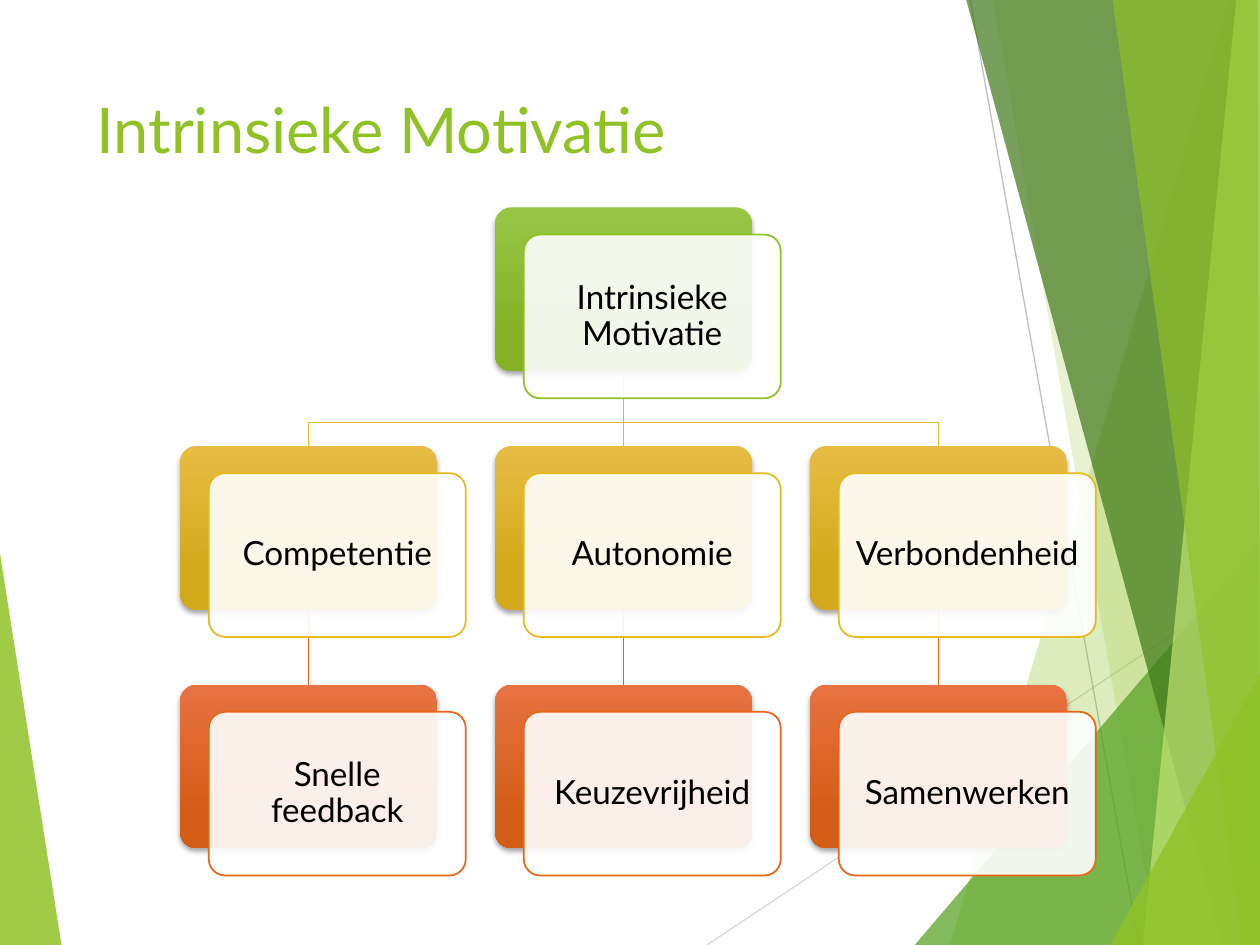
import pptx
import pptx.util
import pptx.dml.color
import pptx.enum.shapes
import pptx.enum.text
import pptx.oxml.ns
from lxml import etree

Cm, Pt = pptx.util.Cm, pptx.util.Pt
SHAPE = pptx.enum.shapes.MSO_SHAPE.ROUNDED_RECTANGLE
STRAIGHT = pptx.enum.shapes.MSO_CONNECTOR.STRAIGHT
FONT = "Lato"
GREEN, GOLD, ORANGE = "90C226", "E6B91E", "E76618"
GRADIENTS = {
    GREEN: ("97C547", "84B223"),
    GOLD: ("E7BC43", "D2A91B"),
    ORANGE: ("E87242", "D35D16"),
}
CARD_W, CARD_H = 5.18, 3.3
COL_PITCH, ROW_PITCH = 6.35, 4.81
FRONT_DX, FRONT_DY = 0.58, 0.55
BUS_DROP = 1.04

LEFT_FACET = [(0, 11.15), (1.24, 19.05), (0, 19.05)]
RULES = [((14.25, 19.05), (25.4, 11.62), "D9D9D9"),
         ((19.56, 0), (22.96, 19.05), "BFBFBF")]
RIGHT_FACETS = [
    ([(24.77, 0), (19.15, 19.05), (25.4, 19.05), (25.4, 0)], GREEN, 30),
    ([(20.02, 0), (23.34, 19.05), (25.4, 19.05), (25.4, 0)], GREEN, 20),
    ([(18.44, 19.05), (25.4, 10.9), (25.4, 19.05)], "54A021", 72),
    ([(19.48, 0), (24.64, 19.05), (25.4, 19.05), (25.4, 0)], "3F7819", 70),
    ([(24.92, 0), (23.04, 19.05), (25.4, 19.05), (25.4, 0)], "C0E474", 70),
    ([(22.43, 0), (25.04, 19.05), (25.4, 19.05), (25.35, 0)], GREEN, 65),
    ([(22.38, 19.05), (25.4, 13.59), (25.4, 19.05)], GREEN, 80),
]


def rgb(value):
    return pptx.dml.color.RGBColor.from_string(value)


def add_xml(parent, tag, **attrs):
    return etree.SubElement(parent, pptx.oxml.ns.qn(tag), attrs)


def fill_solid(sp, color, opacity):
    sp.fill.solid()
    sp.fill.fore_color.rgb = rgb(color)
    clr = sp.fill._xPr.find(".//" + pptx.oxml.ns.qn("a:srgbClr"))
    add_xml(clr, "a:alpha", val=str(opacity * 1000))


def set_line(sp, color, width):
    sp.line.color.rgb = rgb(color)
    sp.line.width = Pt(width)


def add_path(s, points, close):
    start, *rest = [(Cm(x), Cm(y)) for x, y in points]
    builder = s.shapes.build_freeform(*start)
    builder.add_line_segments(rest, close=close)
    sp = builder.convert_to_shape()
    sp.shadow.inherit = False
    return sp


def add_line(s, start, end, color, width):
    cxn = s.shapes.add_connector(STRAIGHT, *[Cm(v) for v in (*start, *end)])
    set_line(cxn, color, width)
    add_xml(cxn._element.spPr, "a:effectLst")
    return cxn


def add_facet(s, left, top, points, color, opacity):
    sp = add_path(s, [(left + x, top + y) for x, y in points], True)
    fill_solid(sp, color, opacity)
    sp.line.fill.background()


def add_background(s, left, top):
    add_facet(s, left, top, LEFT_FACET, GREEN, 85)
    for (x1, y1), (x2, y2), color in RULES:
        add_line(s, (left + x1, top + y1), (left + x2, top + y2), color, 0.75)
    for points, color, opacity in RIGHT_FACETS:
        add_facet(s, left, top, points, color, opacity)


def add_card(s, left, top):
    sp = s.shapes.add_shape(SHAPE, Cm(left), Cm(top), Cm(CARD_W), Cm(CARD_H))
    sp.adjustments[0] = 0.1
    sp.shadow.inherit = False
    return sp


def add_back_card(s, left, top, color):
    sp = add_card(s, left, top)
    sp.fill.gradient()
    sp.fill.gradient_angle = 270
    stops = zip(sp.fill.gradient_stops, (0, 0.78), GRADIENTS[color])
    for stop, position, stop_color in stops:
        stop.position = position
        stop.color.rgb = rgb(stop_color)
    sp.line.fill.background()
    effects = sp._element.spPr.find(pptx.oxml.ns.qn("a:effectLst"))
    shadow = add_xml(effects, "a:outerShdw", blurRad=str(Pt(3)), dist=str(Pt(2)),
                     dir="5400000", rotWithShape="0")
    clr = add_xml(shadow, "a:srgbClr", val="000000")
    add_xml(clr, "a:alpha", val="35000")
    return sp


def format_run(p, size, color):
    r = p.runs[0]
    r.font.name = FONT
    r.font.size = Pt(size)
    r.font.color.rgb = rgb(color)


def add_front_card(s, left, top, text, color):
    sp = add_card(s, left + FRONT_DX, top + FRONT_DY)
    fill_solid(sp, "FFFFFF", 90)
    set_line(sp, color, 1)
    tf = sp.text_frame
    tf.word_wrap = True
    tf.vertical_anchor = pptx.enum.text.MSO_ANCHOR.MIDDLE
    tf.margin_left = tf.margin_right = tf.margin_top = tf.margin_bottom = Cm(0.2)
    tf.text = text
    p = tf.paragraphs[0]
    p.alignment = pptx.enum.text.PP_ALIGN.CENTER
    p.line_spacing = 0.9
    format_run(p, 19, "000000")


def join_cards(s, upper, lower, left, top, color):
    x = left + CARD_W / 2
    cxn = add_line(s, (x, top + CARD_H), (x, top + ROW_PITCH), color, 1)
    cxn.begin_connect(upper, 2)
    cxn.end_connect(lower, 0)


def add_elbow(s, x_parent, x_child, top, bottom):
    bus = top + BUS_DROP
    sp = add_path(s, [(x_parent, top), (x_parent, bus), (x_child, bus),
                      (x_child, bottom)], False)
    sp.fill.background()
    set_line(sp, GOLD, 1)


def add_hierarchy(s, left, top, root, branches):
    xs = [left + i * COL_PITCH for i in range(len(branches))]
    ys = [top + i * ROW_PITCH for i in range(3)]
    middle = len(xs) // 2
    cards = [(xs[middle], ys[0], root, GREEN)]
    root_back = add_back_card(s, xs[middle], ys[0], GREEN)
    x_root = xs[middle] + CARD_W / 2

    for i, (x, labels) in enumerate(zip(xs, branches)):
        need = add_back_card(s, x, ys[1], GOLD)
        example = add_back_card(s, x, ys[2], ORANGE)
        join_cards(s, need, example, x, ys[1], ORANGE)
        if i == middle:
            join_cards(s, root_back, need, x, ys[0], GOLD)
        else:
            add_elbow(s, x_root, x + CARD_W / 2, ys[0] + CARD_H, ys[1])
        cards += zip((x, x), ys[1:], labels, (GOLD, ORANGE))

    for card in cards:
        add_front_card(s, *card)


def add_title(s, left, top, width, height, text):
    sp = s.shapes.add_textbox(Cm(left), Cm(top), Cm(width), Cm(height))
    tf = sp.text_frame
    tf.word_wrap = True
    tf.text = text
    format_run(tf.paragraphs[0], 36, GREEN)


def main():
    prs = pptx.Presentation()
    prs.slide_width, prs.slide_height = Cm(25.4), Cm(19.05)
    s = prs.slides.add_slide(prs.slide_layouts[6])
    add_background(s, 0, 0)
    add_hierarchy(s, 3.63, 4.18, "Intrinsieke Motivatie", [
        ("Competentie", "Snelle feedback"),
        ("Autonomie", "Keuzevrijheid"),
        ("Verbondenheid", "Samenwerken"),
    ])
    add_title(s, 1.7, 1.7, 17.63, 3.66, "Intrinsieke Motivatie")
    prs.save("out.pptx")


if __name__ == "__main__":
    main()
